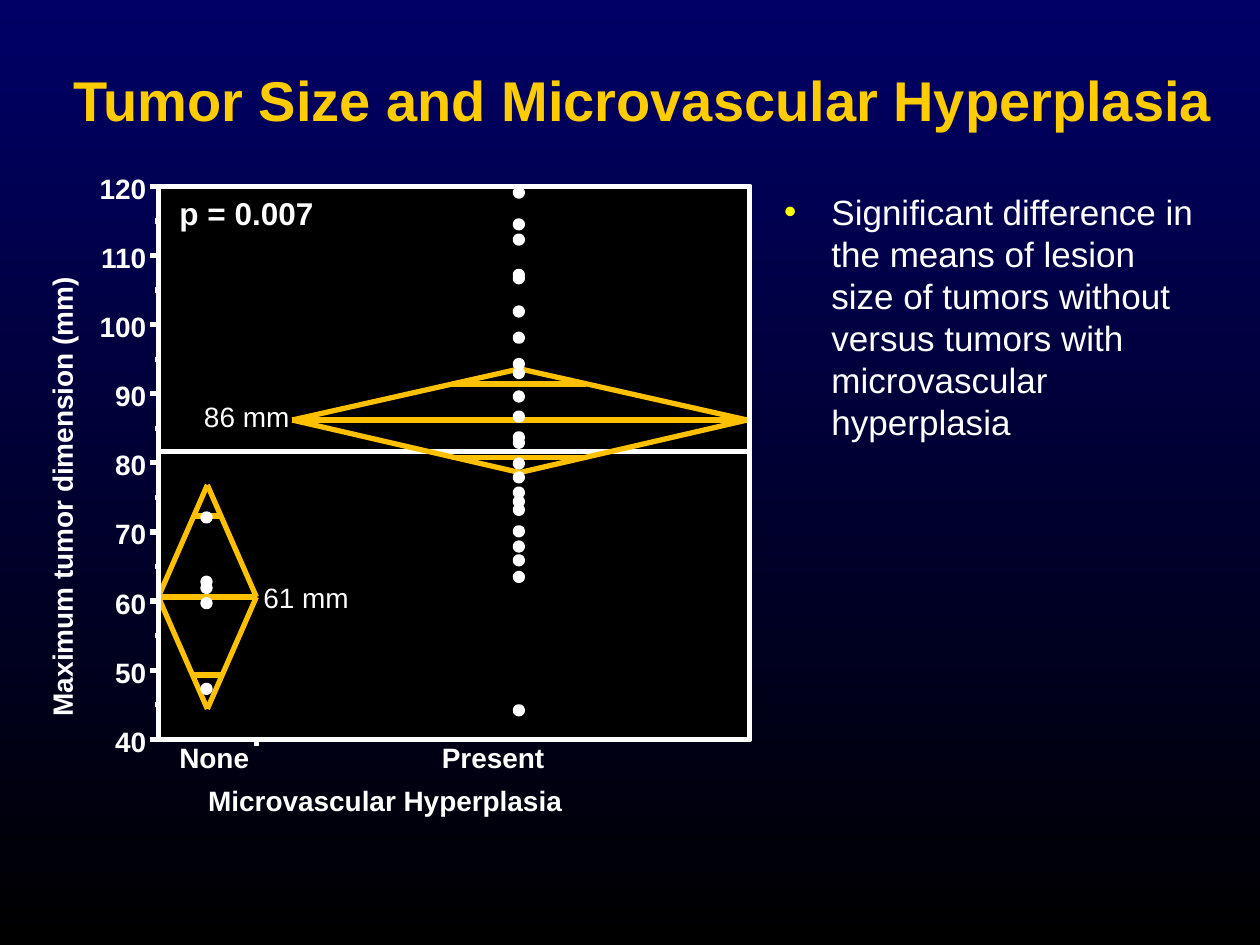
from collections import namedtuple

from lxml.etree import SubElement
from pptx import Presentation
from pptx.dml.color import RGBColor
from pptx.enum.shapes import MSO_CONNECTOR, MSO_SHAPE
from pptx.enum.text import MSO_ANCHOR, PP_ALIGN
from pptx.oxml.ns import qn
from pptx.util import Pt

Box = namedtuple("Box", "left top width height")
Group = namedtuple("Group", "left center right dots bar_left bar_right low bar_low mean bar_high high values")

WHITE, GOLD, AMBER, YELLOW = "FFFFFF", "FFCC00", "FFC000", "FFFF00"
NAVY, BLACK = "000066", "000000"
FONT = "Arial"
STROKE = 3
AXIS_LOW, AXIS_HIGH, AXIS_STEP = 40, 120, 5
OVERALL_MEAN = 81.6

NONE = Group(0, 28, 56, 27.5, 19.5, 36, 44.4, 49.3, 60.6, 72.3, 76.8,
             [72.1, 62.8, 61.9, 59.7, 47.3])
PRESENT = Group(76.5, 206.5, 336.5, 206, 168, 244.5, 78.6, 80.8, 86.2, 91.4, 93.6,
                [119.1, 114.5, 112.3, 107.2, 106.7, 101.9, 98.1, 94.3, 93, 89.6, 86.7, 83.7,
                 82.9, 79.9, 77.9, 75.7, 74.4, 73.2, 70.1, 67.9, 65.9, 63.5, 44.2])


def color(value):
    return RGBColor.from_string(value)


def write(para, text, size, tone=WHITE, bold=False):
    span = para.add_run()
    span.text = text
    span.font.name = FONT
    span.font.size = Pt(size)
    span.font.bold = bold
    span.font.color.rgb = color(tone)


def add_text(page, box, text, size=16, bold=False, inset=False, align=PP_ALIGN.LEFT):
    shape = page.shapes.add_textbox(*map(Pt, box))
    frame = shape.text_frame
    frame.word_wrap = True
    para = frame.paragraphs[0]
    para.alignment = align
    if inset:
        para.space_before = Pt(size * 0.1)
    else:
        frame.margin_left = frame.margin_right = frame.margin_top = frame.margin_bottom = 0
    write(para, text, size, bold=bold)
    return shape


def add_line(page, start, end, tone=WHITE):
    line = page.shapes.add_connector(MSO_CONNECTOR.STRAIGHT, *map(Pt, (*start, *end)))
    line.line.color.rgb = color(tone)
    line.line.width = Pt(STROKE)
    SubElement(line._element.spPr, qn("a:effectLst"))


def add_outlined(page, kind, box, fill=None):
    shape = page.shapes.add_shape(kind, *map(Pt, box))
    shape.shadow.inherit = False
    if fill:
        shape.fill.solid()
        shape.fill.fore_color.rgb = color(fill)
    else:
        shape.fill.background()
    shape.line.color.rgb = color(WHITE)
    shape.line.width = Pt(STROKE)


def height_of(box, value):
    return box.top + box.height * (AXIS_HIGH - value) / (AXIS_HIGH - AXIS_LOW)


def add_value_axis(page, box):
    for value in range(AXIS_LOW, AXIS_HIGH + 1, AXIS_STEP):
        y = height_of(box, value)
        major = value % 10 == 0
        add_line(page, (box.left, y), (box.left - (5 if major else 2), y))
        if major:
            add_text(page, Box(box.left - 39, y - 8.6, 32, 19.4), str(value),
                     bold=True, align=PP_ALIGN.RIGHT)
    title = add_text(page, Box(box.left - 198.5, box.top + 149.8, 286.6, 19.4),
                     "Maximum tumor dimension (mm)", bold=True)
    title.rotation = 270


def add_category_axis(page, box):
    bottom = box.top + box.height
    add_line(page, (box.left + 56, bottom), (box.left + 56, bottom + 4))
    for text, left, top, width in (("None", 12, 0.5, 42), ("Present", 162, 0.5, 62),
                                   ("Microvascular Hyperplasia", 28.5, 25.5, 263)):
        add_text(page, Box(box.left + left, bottom + top, width, 19.4), text, bold=True)


def add_mean_diamond(page, box, group):
    def place(x, value):
        return box.left + x, height_of(box, value)

    left, right = place(group.left, group.mean), place(group.right, group.mean)
    top, bottom = place(group.center, group.high), place(group.center, group.low)
    add_line(page, left, right, AMBER)
    corners = [left, bottom, right, top]
    for start, end in zip(corners, corners[1:] + corners[:1]):
        add_line(page, start, end, AMBER)
    for value in (group.bar_high, group.bar_low):
        add_line(page, place(group.bar_left, value), place(group.bar_right, value), AMBER)


def add_dots(page, box, group, size=4):
    for value in group.values:
        add_outlined(page, MSO_SHAPE.OVAL,
                     Box(box.left + group.dots - size / 2, height_of(box, value) - size / 2, size, size),
                     WHITE)


def add_plot(page, box):
    add_value_axis(page, box)
    add_outlined(page, MSO_SHAPE.RECTANGLE, box, BLACK)
    mean = height_of(box, OVERALL_MEAN)
    add_line(page, (box.left, mean), (box.left + box.width, mean))
    for group in (NONE, PRESENT):
        add_mean_diamond(page, box, group)
    for group in (PRESENT, NONE):
        add_dots(page, box, group)
    add_outlined(page, MSO_SHAPE.RECTANGLE, box)
    add_category_axis(page, box)
    for text, left, top, width, size, bold in (("p = 0.007", 5, 0.8, 205, 18, True),
                                               ("61 mm", 53, 221.8, 80, 16, False),
                                               ("86 mm", 19, 118.2, 72, 16, False)):
        add_text(page, Box(box.left + left, box.top + top, width, 26), text, size, bold, inset=True)


def add_finding(page, box):
    shape = add_text(page, box, "Significant difference in the means of lesion size of tumors without "
                     "versus tumors with microvascular hyperplasia", 20, inset=True)
    settings = shape.text_frame.paragraphs[0]._p.get_or_add_pPr()
    settings.set("marL", str(Pt(27)))
    settings.set("indent", str(Pt(-27)))
    tone = SubElement(settings, qn("a:buClr"))
    SubElement(tone, qn("a:srgbClr")).set("val", YELLOW)
    SubElement(settings, qn("a:buFont")).set("typeface", FONT)
    SubElement(settings, qn("a:buChar")).set("char", "•")


def set_title(page, box):
    title = page.shapes.title
    title.left, title.top, title.width, title.height = map(Pt, box)
    title.text_frame.word_wrap = True
    title.text_frame.vertical_anchor = MSO_ANCHOR.MIDDLE
    para = title.text_frame.paragraphs[0]
    para.alignment = PP_ALIGN.CENTER
    write(para, "Tumor Size and Microvascular Hyperplasia", 32, GOLD, True)


def set_background(page):
    fill = page.background.fill
    fill.gradient()
    fill.gradient_angle = 270
    for stop, tone, position in zip(fill.gradient_stops, (NAVY, BLACK), (0, 1)):
        stop.color.rgb = color(tone)
        stop.position = position


def main():
    deck = Presentation()
    deck.slide_width, deck.slide_height = Pt(720), Pt(540)
    page = deck.slides.add_slide(deck.slide_layouts[5])
    set_background(page)
    set_title(page, Box(25.5, 11.5, 684, 90))
    add_plot(page, Box(90.5, 106.5, 338, 316))
    add_finding(page, Box(441, 105.5, 249, 346))
    deck.save("out.pptx")


if __name__ == "__main__":
    main()
